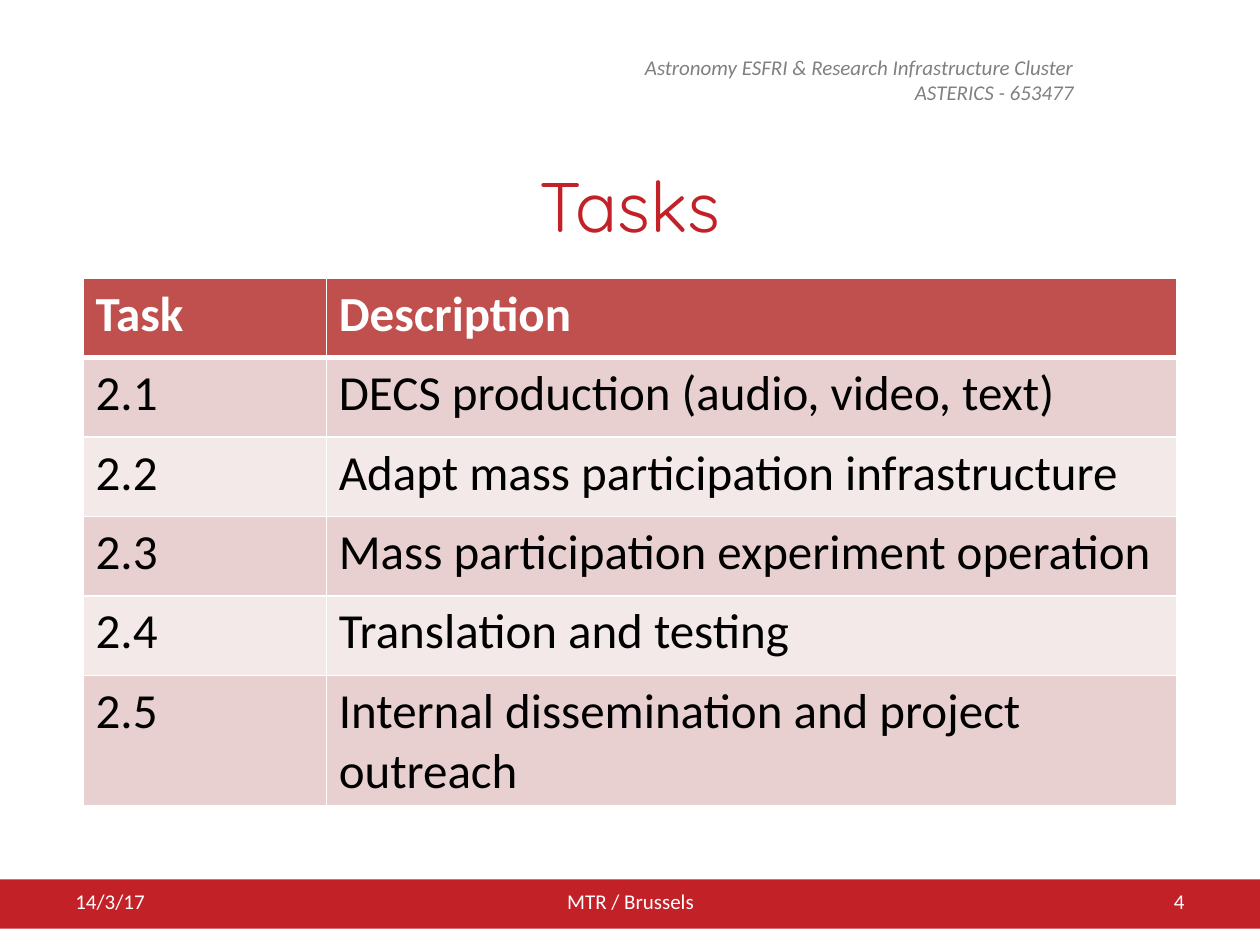
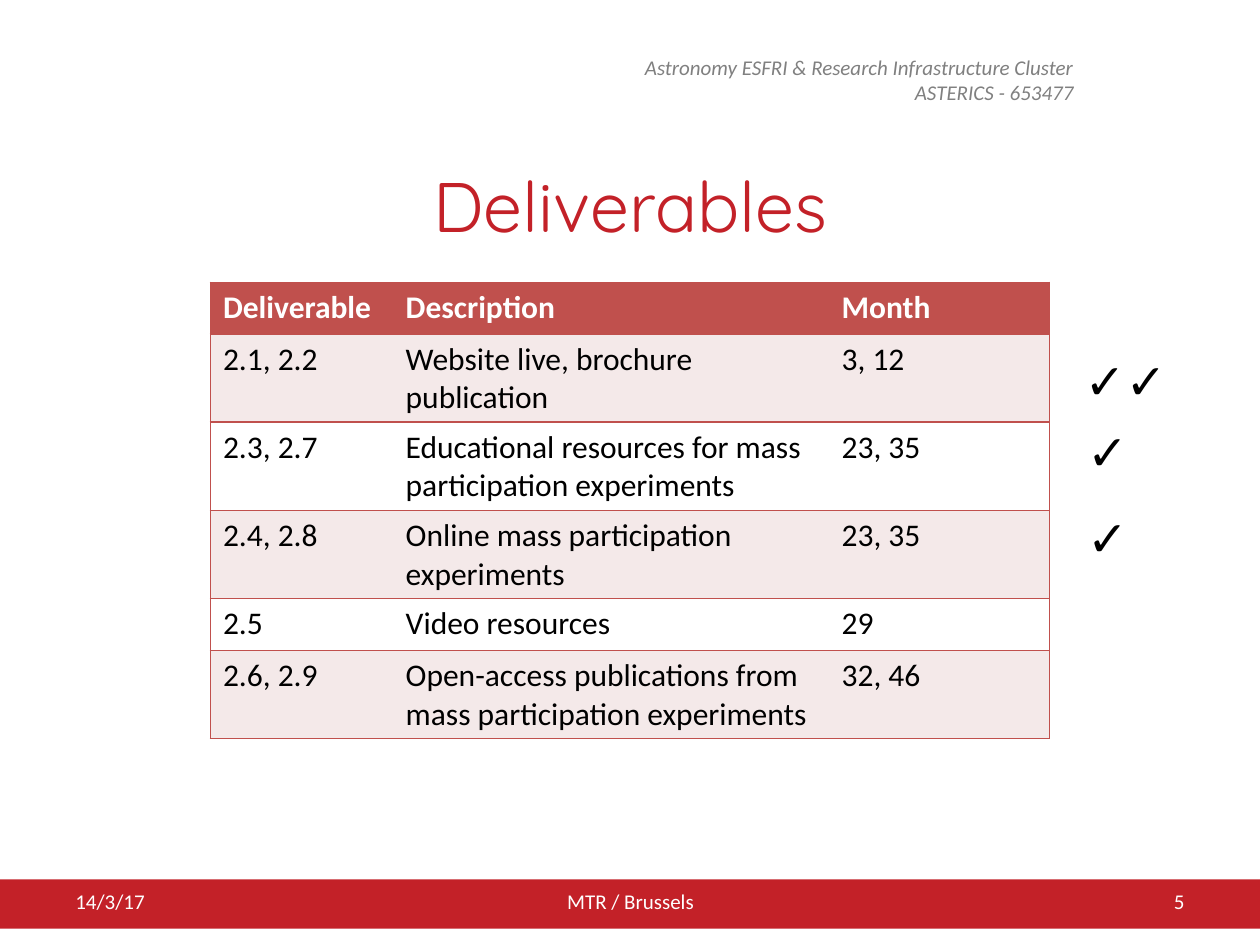
from lxml import etree
from pptx import Presentation
from pptx.dml.color import RGBColor
from pptx.enum.shapes import MSO_SHAPE
from pptx.enum.text import MSO_ANCHOR, PP_ALIGN
from pptx.oxml.ns import qn
from pptx.util import Inches, Pt

LEFT, CENTER, RIGHT = PP_ALIGN.LEFT, PP_ALIGN.CENTER, PP_ALIGN.RIGHT
TOP, MIDDLE = MSO_ANCHOR.TOP, MSO_ANCHOR.MIDDLE
RECTANGLE = MSO_SHAPE.RECTANGLE

RED, BRICK, WHITE, BLACK, GREY = "C32128", "C0504D", "FFFFFF", "000000", "808080"
ROSE, PALE = "E8D0D0", "F4E9E9"

PROJECT = ["Astronomy ESFRI & Research Infrastructure Cluster", "ASTERICS - 653477"]
DATE, EVENT = "14/3/17", "MTR / Brussels"

STYLES = {
    "project": {"size": 12, "name": "Calibri", "color": GREY, "italic": True},
    "title": {"size": 40, "name": "Quicksand", "color": RED},
    "footer": {"size": 12, "name": "Calibri", "color": WHITE},
    "tick": {"size": 28, "name": "Calibri", "color": BLACK},
}

SLIDES = [
    {
        "title": "Tasks",
        "number": 4,
        "at": (0.66, 2.21),
        "columns": [1.93, 6.75],
        "row_height": 0.63,
        "size": 28,
        "bands": [ROSE, PALE],
        "line": WHITE,
        "header_rule": 3,
        "inner_verticals": True,
        "rows": [
            ("Task", "Description"),
            ("2.1", "DECS production (audio, video, text)"),
            ("2.2", "Adapt mass participation infrastructure"),
            ("2.3", "Mass participation experiment operation"),
            ("2.4", "Translation and testing"),
            ("2.5", "Internal dissemination and project outreach"),
        ],
        "ticks": [],
    },
    {
        "title": "Deliverables",
        "number": 5,
        "at": (1.67, 2.24),
        "columns": [1.45, 3.46, 1.75],
        "row_height": 0.41,
        "size": 18,
        "bands": [PALE, WHITE],
        "line": BRICK,
        "header_rule": 1,
        "inner_verticals": False,
        "rows": [
            ("Deliverable", "Description", "Month"),
            ("2.1, 2.2", "Website live, brochure publication", "3, 12"),
            ("2.3, 2.7", "Educational resources for mass participation experiments", "23, 35"),
            ("2.4, 2.8", "Online mass participation experiments", "23, 35"),
            ("2.5", "Video resources", "29"),
            ("2.6, 2.9", "Open-access publications from mass participation experiments", "32, 46"),
        ],
        "ticks": [
            ("✓✓", (8.51, 2.73, 0.99, 0.57)),
            ("✓", (8.53, 3.3, 0.59, 0.57)),
            ("✓", (8.53, 3.98, 0.59, 0.57)),
        ],
    },
]


def rgb(value):
    return RGBColor.from_string(value)


def set_font(font, style):
    for key, value in style.items():
        if key == "color":
            font.color.rgb = rgb(value)
        else:
            setattr(font, key, Pt(value) if key == "size" else value)


def add_text(page, lines, at, style, align=LEFT, anchor=MIDDLE, wrap=True):
    box = page.shapes.add_textbox(*map(Inches, at))
    frame = box.text_frame
    frame.word_wrap = wrap
    frame.vertical_anchor = anchor
    for index, line in enumerate(lines):
        para = frame.add_paragraph() if index else frame.paragraphs[0]
        para.alignment = align
        span = para.add_run()
        span.text = line
        set_font(span.font, STYLES[style])


def add_frame(page, title, number):
    band = page.shapes.add_shape(RECTANGLE, *map(Inches, (0, 6.98, 10, 0.39)))
    band.shadow.inherit = False
    band.fill.solid()
    band.fill.fore_color.rgb = rgb(RED)
    band.line.fill.background()
    add_text(page, PROJECT, (4.37, 0.38, 4.25, 0.5), "project", RIGHT, TOP)
    add_text(page, [title], (0.5, 1.15, 9, 0.94), "title", CENTER)
    footers = [(DATE, 0.5, 2.33, LEFT), (EVENT, 3.42, 3.17, CENTER), (str(number), 7.17, 2.33, RIGHT)]
    for text, left, width, align in footers:
        add_text(page, [text], (left, 6.95, width, 0.4), "footer", align)


def set_border(cell, side, color, width):
    properties = cell._tc.get_or_add_tcPr()
    line = etree.SubElement(properties, qn(f"a:ln{side}"), w=str(Pt(width)))
    if width:
        fill = etree.SubElement(line, qn("a:solidFill"))
        etree.SubElement(fill, qn("a:srgbClr"), val=color)
    else:
        etree.SubElement(line, qn("a:noFill"))


def add_table(page, content):
    rows, columns = content["rows"], content["columns"]
    height = content["row_height"]
    size = (sum(columns), height * len(rows))
    table = page.shapes.add_table(len(rows), len(columns), *map(Inches, content["at"] + size)).table
    table.horz_banding = False
    table.first_row = False
    for column, width in zip(table.columns, columns):
        column.width = Inches(width)
    inner = int(content["inner_verticals"])
    for r, row in enumerate(rows):
        table.rows[r].height = Inches(height)
        header = r == 0
        for c, text in enumerate(row):
            cell = table.cell(r, c)
            widths = {
                "L": 1 if c == 0 else inner,
                "R": 1 if c == len(row) - 1 else inner,
                "T": content["header_rule"] if r == 1 else 1,
                "B": content["header_rule"] if header else 1,
            }
            for side, width in widths.items():
                set_border(cell, side, content["line"], width)
            cell.fill.solid()
            cell.fill.fore_color.rgb = rgb(BRICK if header else content["bands"][(r - 1) % 2])
            span = cell.text_frame.paragraphs[0].add_run()
            span.text = text
            set_font(span.font, {"size": content["size"], "name": "Calibri", "bold": header,
                                 "color": WHITE if header else BLACK})


def main():
    deck = Presentation()
    deck.slide_width, deck.slide_height = Inches(10), Inches(7.5)
    for content in SLIDES:
        page = deck.slides.add_slide(deck.slide_layouts[6])
        add_frame(page, content["title"], content["number"])
        add_table(page, content)
        for text, at in content["ticks"]:
            add_text(page, [text], at, "tick", anchor=TOP, wrap=False)
    deck.save("out.pptx")


if __name__ == "__main__":
    main()
